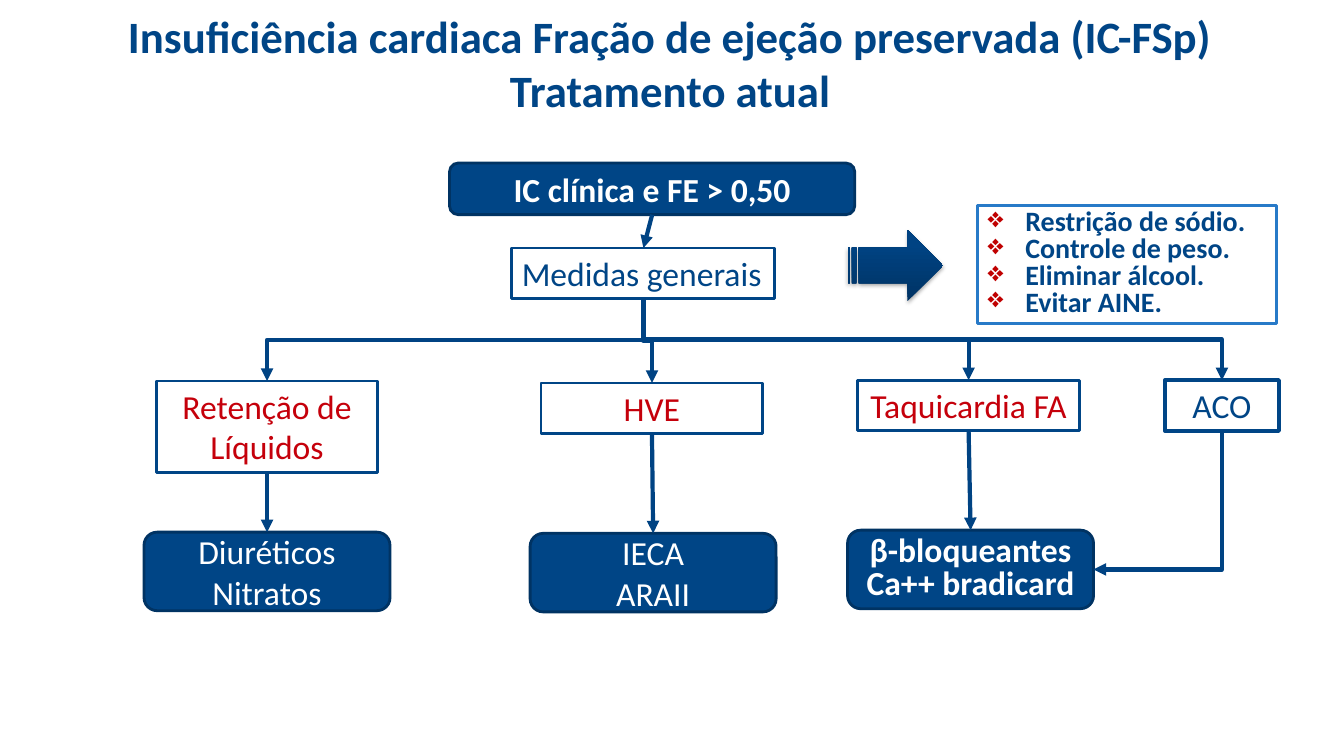
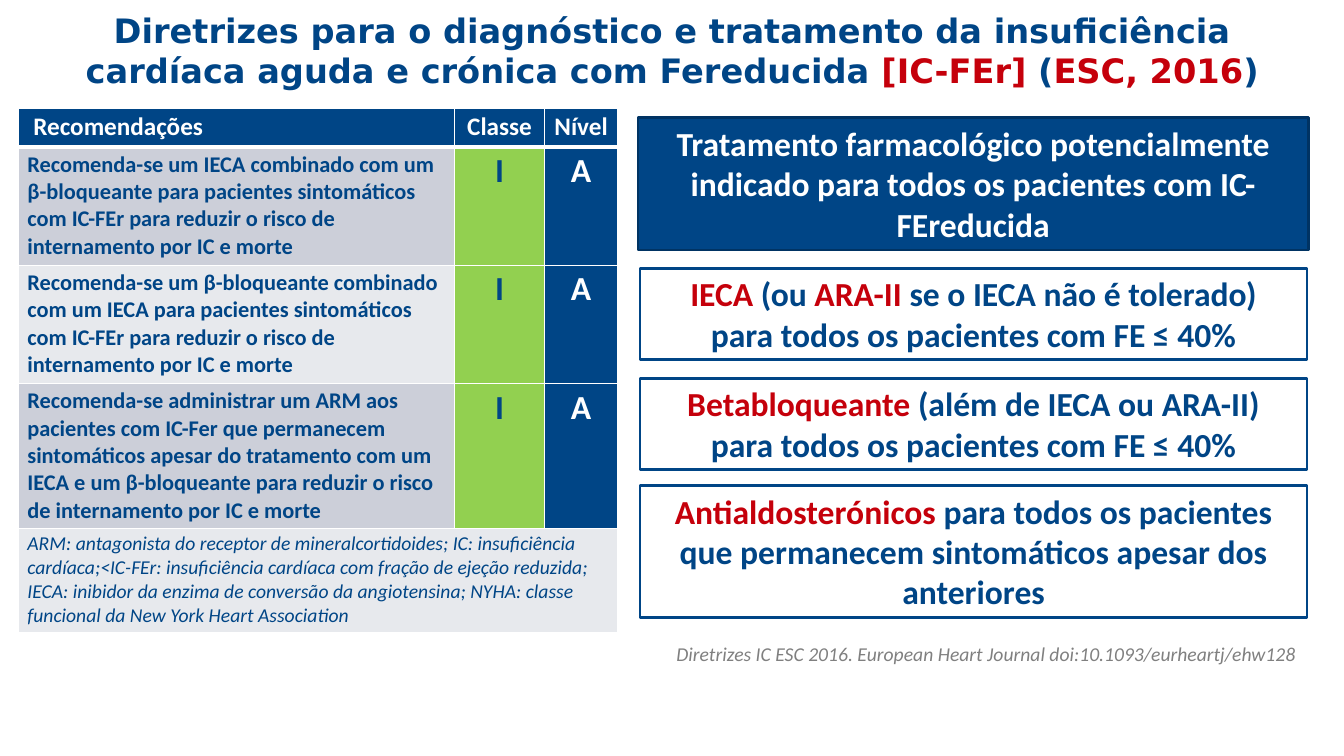
import pptx
import pptx.util
import pptx.dml.color
import pptx.enum.shapes
import pptx.enum.text
import pptx.oxml
import pptx.oxml.ns

Cm, Pt = pptx.util.Cm, pptx.util.Pt
Kind = pptx.enum.shapes.MSO_SHAPE
Link = pptx.enum.shapes.MSO_CONNECTOR
Align = pptx.enum.text.PP_ALIGN
Anchor = pptx.enum.text.MSO_ANCHOR
qn = pptx.oxml.ns.qn

HEX = dict(navy="004586", edge="003363", link="004383", red="C5000B", bullet="C00000",
           blue="287AC8", white="FFFFFF", gray="808080", green="92D050",
           dark="CCCFD9", light="E7E9ED", shade="003364")
ALIGN = dict(l=Align.LEFT, c=Align.CENTER, r=Align.RIGHT)
ANCHOR = dict(t=Anchor.TOP, m=Anchor.MIDDLE)

# Content: a text is a list of paragraphs, a paragraph a list of (words, colour)
# or plain words. Boxes are left, top, width, height in cm.
FLOW_TITLE = ["Insuficiência cardiaca Fração de ejeção preservada (IC-FSp)\vTratamento atual"]
START = ("IC clínica e FE > 0,50", (11.33, 4.11, 10.21, 1.3))
GENERAL = ("Medidas generais", (12.9, 6.25, 6.63, 1.28))
ADVICE = ["Restrição de sódio.", "Controle de peso.", "Eliminar álcool.", "Evitar AINE."]
ADVICE_BOX = (24.64, 5.18, 7.54, 2.97)
ARROW_BOX = (21.36, 5.79, 2.41, 1.8)
# cause, centre, top, height; drugs, centre, top, bold
BRANCHES = [
    ("Retenção de Líquidos", 6.73, 9.6, 2.31,
     ["Diuréticos", "Nitratos"], 6.73, 13.41, False),
    ("HVE", 16.43, 9.65, 1.28,
     ["IECA", "ARAII"], 16.46, 13.44, False),
    ("Taquicardia FA", 24.41, 9.58, 1.28,
     ["β-bloqueantes", "Ca++ bradicard"], 24.46, 13.36, True),
]
CAUSE_W, DRUG_W, DRUG_H = 5.59, 6.2, 1.98
ACO = ("ACO", (29.36, 9.58, 2.87, 1.28))

GUIDE_TITLE = [["Diretrizes para o diagnóstico e tratamento da insuficiência cardíaca "
                "aguda e crónica com Fereducida ", ("[IC-FEr] ", "red"), "(",
                ("ESC, 2016", "red"), ")"]]
SOURCE = "Diretrizes IC ESC 2016. European Heart Journal doi:10.1093/eurheartj/ehw128"
LEAD = ("Tratamento farmacológico potencialmente indicado para todos os pacientes "
        "com IC-FEreducida")
LEAD_BOX = (16.08, 2.97, 16.89, 3.33)
ALL = "para todos os pacientes com FE ≤ 40%"
# top, height, text
DRUGS = [
    (6.76, 2.31, [[("IECA", "red"), " (ou ", ("ARA-II", "red"),
                   " se o IECA não é tolerado)"], ALL]),
    (9.53, 2.31, [[("Betabloqueante", "red"), " (além de IECA ou ARA-II)"], ALL]),
    (12.24, 3.33, [[("Antialdosterónicos ", "red"), "para todos os pacientes que "
                    "permanecem sintomáticos apesar dos anteriores"]]),
]
HEADS = ["Recomendações", "Classe", "Nível"]
ADVISED = [
    "Recomenda-se um IECA combinado com um β-bloqueante para pacientes sintomáticos "
    "com IC-FEr para reduzir o risco de internamento por IC e morte",
    "Recomenda-se um β-bloqueante combinado com um IECA para pacientes sintomáticos "
    "com IC-FEr para reduzir o risco de internamento por IC e morte",
    "Recomenda-se administrar um ARM aos pacientes com IC-Fer que permanecem "
    "sintomáticos apesar do tratamento com um IECA e um β-bloqueante para reduzir "
    "o risco de internamento por IC e morte",
]
KEY = ("ARM: antagonista do receptor de mineralcortidoides; IC: insuficiência "
       "cardíaca;<IC-FEr: insuficiência cardíaca com fração de ejeção reduzida; "
       "IECA: inibidor da enzima de conversão da angiotensina; NYHA: classe funcional "
       "da New York Heart Association")
COLS = [11, 2.26, 1.85]
ROWS = [0.98, 2.98, 2.98, 3.65, 2.63]


def rgb(name):
    return pptx.dml.color.RGBColor.from_string(HEX[name])


def xml(parent, tag, **attrs):
    node = pptx.oxml.parse_xml('<a:%s xmlns:a="%s"/>' % (tag, pptx.oxml.ns.nsuri("a")))
    for key, value in attrs.items():
        node.set(key, str(value))
    parent.append(node)
    return node


def write(frame, text, size=24, color="navy", bold=False, italic=False, align="c",
          font="Calibri", gap=None, bullet=None):
    for i, line in enumerate([text] if isinstance(text, str) else text):
        para = frame.paragraphs[0] if i == 0 else frame.add_paragraph()
        para.alignment = ALIGN[align]
        if bullet:
            props = para._p.get_or_add_pPr()
            props.set("marL", str(Cm(0.95)))
            props.set("indent", str(-Cm(0.95)))
            xml(xml(props, "buClr"), "srgbClr", val=HEX["bullet"])
            xml(props, "buChar", char=bullet)
        if gap:
            para.line_spacing = gap
        for part in [line] if isinstance(line, str) else line:
            words, tone = (part, color) if isinstance(part, str) else part
            for j, piece in enumerate(words.split("\v")):
                if j:
                    para.add_line_break()
                run = para.add_run()
                run.text = piece
                run.font.name, run.font.size = font, Pt(size)
                run.font.bold, run.font.italic = bold, italic
                run.font.color.rgb = rgb(tone)


def label(slide, box, text, anchor="m", **style):
    frame = slide.shapes.add_textbox(*map(Cm, box)).text_frame
    frame.word_wrap = True
    frame.vertical_anchor = ANCHOR[anchor]
    write(frame, text, **style)


def title(slide, box, text, **style):
    label(slide, box, text, bold=True, **style)


def panel(slide, box, text, kind=Kind.RECTANGLE, fill="white", line="navy", weight=2,
          anchor="t", wrap=True, **style):
    shape = slide.shapes.add_shape(kind, *map(Cm, box))
    shape.shadow.inherit = False
    shape.fill.solid()
    shape.fill.fore_color.rgb = rgb(fill)
    shape.line.color.rgb = rgb(line)
    shape.line.width = Pt(weight)
    shape.text_frame.word_wrap = wrap
    shape.text_frame.vertical_anchor = ANCHOR[anchor]
    write(shape.text_frame, text, **style)


def pill(slide, box, text, **style):
    panel(slide, box, text, kind=Kind.ROUNDED_RECTANGLE, fill="navy", line="edge",
          anchor="m", color="white", **style)


def arrow(slide, x1, y1, x2, y2, bend=None):
    """Straight arrow, or one that leaves downwards and has the given bend preset."""
    if bend:
        wide, high = y2 - y1, abs(x2 - x1)
        left, top = (x1 + x2 - wide) / 2, (y1 + y2 - high) / 2
        link = slide.shapes.add_connector(
            Link.ELBOW, *map(Cm, (left, top, left + wide, top + high)))
        frame = link._element.spPr.find(qn("a:xfrm"))
        frame.set("rot", "5400000" if x2 < x1 else "16200000")
        if x2 > x1:
            frame.set("flipH", "1")
        link._element.spPr.find(qn("a:prstGeom")).set("prst", bend)
    else:
        link = slide.shapes.add_connector(Link.STRAIGHT, *map(Cm, (x1, y1, x2, y2)))
    link.line.color.rgb = rgb("link")
    link.line.width = Pt(3)
    xml(link.line._get_or_add_ln(), "tailEnd", type="triangle")
    xml(link._element.spPr, "effectLst")


def striped(slide):
    shape = slide.shapes.add_shape(Kind.STRIPED_RIGHT_ARROW, *map(Cm, ARROW_BOX))
    shape.line.fill.background()
    shape.fill.gradient()
    shape.fill.gradient_angle = 90
    for stop, (tone, place) in zip(shape.fill.gradient_stops,
                                   [("shade", 0), ("link", 0.8)]):
        stop.color.rgb = rgb(tone)
        stop.position = place
    shape.shadow.inherit = False
    effects = shape._element.spPr.find(qn("a:effectLst"))
    shadow = xml(effects, "outerShdw", blurRad=Pt(3.1), dist=Pt(1.8), dir=5400000,
                 rotWithShape=0)
    xml(xml(shadow, "srgbClr", val="000000"), "alpha", val=35000)


def flow(slide):
    title(slide, (1.65, 0.33, 30.48, 2.49), FLOW_TITLE, size=32)
    pill(slide, START[1], START[0], bold=True)
    panel(slide, GENERAL[1], GENERAL[0], wrap=False, align="l")
    panel(slide, ADVICE_BOX, ADVICE, line="blue", size=20, bold=True, align="l",
          gap=0.8, bullet="❖")
    striped(slide)

    # Trunk
    left, top, wide, high = START[1]
    start_x, start_y = left + wide / 2, top + high
    left, top, wide, high = GENERAL[1]
    mid, base = left + wide / 2, top + high
    arrow(slide, start_x, start_y, mid, top)

    # Branches
    for cause, x, y, tall, drugs, drug_x, drug_y, strong in BRANCHES:
        panel(slide, (x - CAUSE_W / 2, y, CAUSE_W, tall), cause, color="red")
        pill(slide, (drug_x - DRUG_W / 2, drug_y, DRUG_W, DRUG_H), drugs, bold=strong,
             gap=0.8 if strong else None)
        arrow(slide, mid, base, x, y, bend="bentConnector3")
        arrow(slide, x, y + tall, drug_x, drug_y)

    # ACO joins the last branch from the side
    panel(slide, ACO[1], ACO[0], weight=3)
    left, top, wide, high = ACO[1]
    x = left + wide / 2
    arrow(slide, mid, base, x, top, bend="bentConnector3")
    arrow(slide, x, top + high, drug_x + DRUG_W / 2, drug_y + DRUG_H / 2,
          bend="bentConnector2")


def fill_cell(table, row, col, text, fill, indent=0.23, **style):
    cell = table.cell(row, col)
    cell.margin_left, cell.margin_right = Cm(indent), Cm(0.23)
    cell.margin_top = cell.margin_bottom = Cm(0.1)
    props = cell._tc.get_or_add_tcPr()
    for side in "LRTB":
        thick = (row, side) in [(0, "B"), (1, "T")]
        edge = xml(props, "ln" + side, w=Pt(3 if thick else 1))
        xml(xml(edge, "solidFill"), "srgbClr", val=HEX["white"])
    cell.fill.solid()
    cell.fill.fore_color.rgb = rgb(fill)
    write(cell.text_frame, text, **style)


def grid(slide):
    table = slide.shapes.add_table(len(ROWS), len(COLS), Cm(0.46), Cm(2.72),
                                   Cm(sum(COLS)), Cm(sum(ROWS))).table
    table.first_row = table.horz_banding = False
    for col, wide in zip(table.columns, COLS):
        col.width = Cm(wide)
    for row, high in zip(table.rows, ROWS):
        row.height = Cm(high)
    for c, head in enumerate(HEADS):
        fill_cell(table, 0, c, head, "navy", size=18, color="white", bold=True,
                  align="c" if c else "l", indent=0.23 if c else 0.38)
    for r, text in enumerate(ADVISED, 1):
        fill_cell(table, r, 0, text, "dark" if r % 2 else "light", size=16, bold=True,
                  align="l")
        fill_cell(table, r, 1, "I", "green", bold=True)
        fill_cell(table, r, 2, "A", "navy", color="white", bold=True)
    last = len(ROWS) - 1
    table.cell(last, 0).merge(table.cell(last, len(COLS) - 1))
    fill_cell(table, last, 0, KEY, "light", size=14, italic=True, align="l")


def guide(slide):
    title(slide, (1.7, 0.43, 30.48, 1.68), GUIDE_TITLE, font="DejaVu Sans")
    panel(slide, LEAD_BOX, LEAD, fill="navy", line="edge", color="white", bold=True)
    for top, high, text in DRUGS:
        panel(slide, (16.13, top, 16.81, high), text, bold=True)
    grid(slide)
    label(slide, (0.84, 16.05, 32.08, 0.81), SOURCE, anchor="t", size=14, color="gray",
          italic=True, align="r")


def main():
    deck = pptx.Presentation()
    deck.slide_width, deck.slide_height = Cm(33.87), Cm(19.05)
    for build in (flow, guide):
        build(deck.slides.add_slide(deck.slide_layouts[6]))
    deck.save("out.pptx")


if __name__ == "__main__":
    main()
